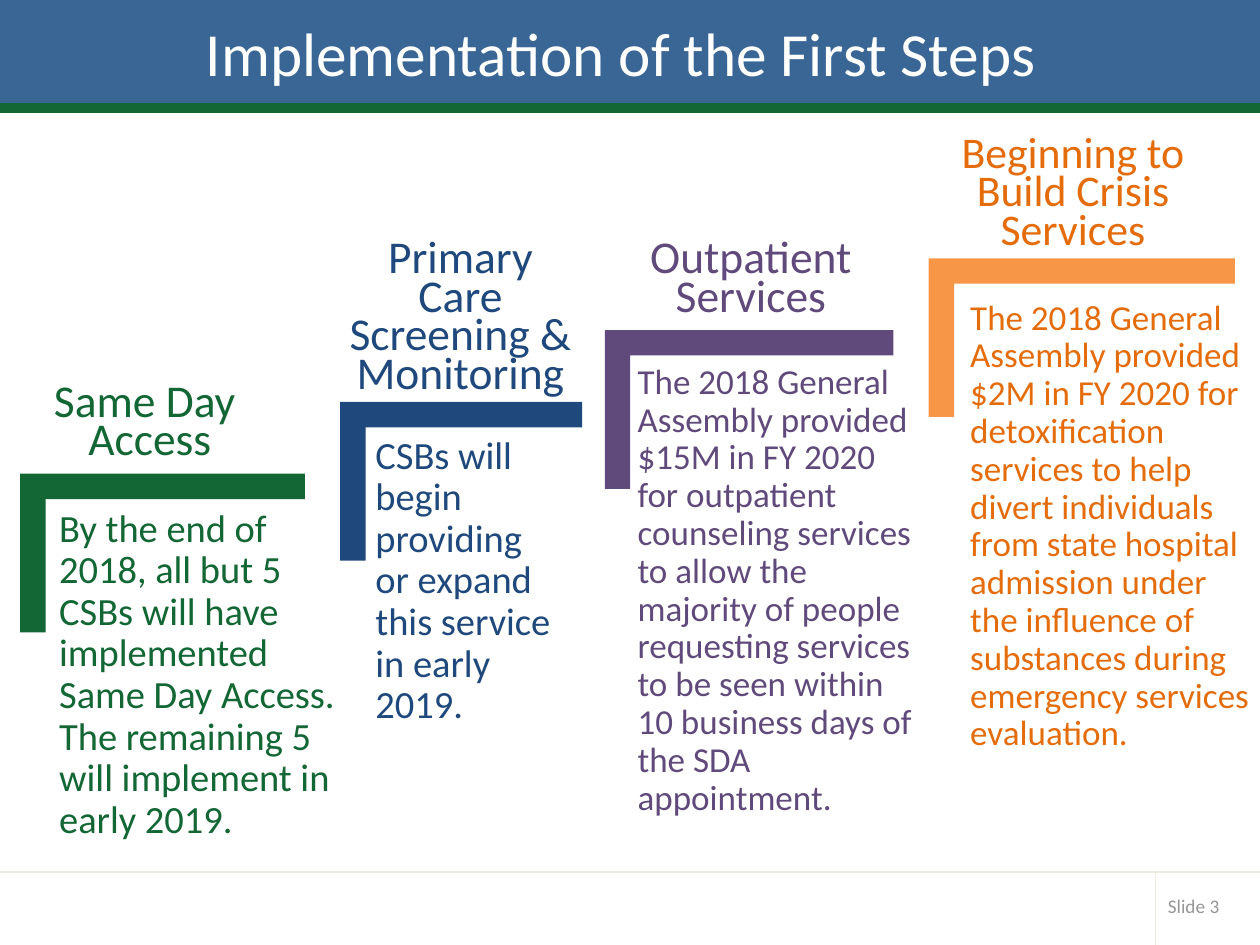
from lxml import etree
from pptx import Presentation
from pptx.dml.color import RGBColor
from pptx.enum import shapes, text
from pptx.oxml.ns import qn
from pptx.util import Inches, Pt

COLORS = {
    "band": "3A6695", "green": "136735", "rule": "EEECE1", "grey": "969696",
    "white": "FFFFFF", "navy": "1F497D", "purple": "604A7B",
    "orange": "E46C0A", "light orange": "F79646",
}
TITLE = "Implementation of the First Steps"
FOOTER = "Slide 3"

# Boxes are left, top, width, height; a bracket is left, width.
STEPS = [
    dict(heading="Same Day \nAccess", heading_box=(0.32, 3.03, 1.74, 0.74),
         heading_size=26, heading_wrap=False, bracket=(0.16, 2.26),
         bracket_color="green", color="green",
         body="By the end of \n2018, all but 5 \nCSBs will have implemented \n"
              "Same Day Access. The remaining 5 will implement in early 2019.",
         body_box=(0.4, 3.97, 2.63, 1.66), body_size=22),
    dict(heading="Primary Care Screening & Monitoring",
         heading_box=(2.66, 1.89, 1.99, 1.35),
         heading_size=26, heading_wrap=True, bracket=(2.7, 1.92),
         bracket_color="navy", color="navy",
         body="CSBs will begin providing or expand this service in early 2019.",
         body_box=(2.91, 3.39, 1.56, 1.66), body_size=22),
    dict(heading="Outpatient Services", heading_box=(5, 1.89, 1.92, 0.74),
         heading_size=26, heading_wrap=True, bracket=(4.8, 2.29),
         bracket_color="purple", color="purple",
         body="The 2018 General Assembly provided $15M in FY 2020 for outpatient "
              "counseling services to allow the majority of people requesting "
              "services to be seen within 10 business days of the SDA appointment.",
         body_box=(4.99, 2.82, 2.38, 1.66), body_size=20),
    dict(heading="Beginning to Build Crisis Services",
         heading_box=(7.37, 1.05, 2.29, 1.04),
         heading_size=25, heading_wrap=True, bracket=(7.37, 2.43),
         bracket_color="light orange", color="orange",
         body="The 2018 General Assembly provided $2M in FY 2020 for detoxification "
              "services to help divert individuals from state hospital admission "
              "under the influence of substances during emergency services evaluation.",
         body_box=(7.63, 2.31, 2.38, 1.66), body_size=20),
]
FIRST_TOP, RISE = 3.76, 0.57
BRACKET_HEIGHT, BRACKET_THICKNESS = 1.26, 0.16


def rgb(name):
    return RGBColor.from_string(COLORS[name])


def add_text(slide, content, box, size, color, align=text.PP_ALIGN.LEFT,
             anchor=text.MSO_ANCHOR.TOP, spacing=None, inset=None, wrap=True):
    frame = slide.shapes.add_textbox(*map(Inches, box)).text_frame
    frame.word_wrap = wrap
    frame.vertical_anchor = anchor
    if inset is not None:
        frame.margin_left = frame.margin_right = Inches(inset)
        frame.margin_top = frame.margin_bottom = Inches(inset)
    paragraph = frame.paragraphs[0]
    paragraph.text = content
    paragraph.alignment = align
    paragraph.line_spacing = spacing
    for run in paragraph.runs:
        run.font.name = "Calibri"
        run.font.size = Pt(size)
        run.font.color.rgb = rgb(color)


def add_filled(slide, kind, box, color, outline=None):
    shape = slide.shapes.add_shape(kind, *map(Inches, box))
    shape.shadow.inherit = False
    shape.fill.solid()
    shape.fill.fore_color.rgb = rgb(color)
    if outline:
        shape.line.color.rgb = rgb(color)
        shape.line.width = Pt(outline)
    else:
        shape.line.fill.background()
    return shape


def add_rule(slide, *ends):
    rule = slide.shapes.add_connector(shapes.MSO_CONNECTOR.STRAIGHT, *map(Inches, ends))
    rule.line.color.rgb = rgb("rule")
    rule.line.width = Pt(1)
    etree.SubElement(rule._element.spPr, qn("a:effectLst"))


def add_bracket(slide, left, top, width, color):
    """Draw a corner turned by 90 degrees, placed by its box after the turn."""
    shift = (width - BRACKET_HEIGHT) / 2
    box = (left + shift, top - shift, BRACKET_HEIGHT, width)
    bracket = add_filled(slide, shapes.MSO_SHAPE.CORNER, box, color)
    bracket.rotation = 90
    for i in range(2):
        bracket.adjustments[i] = BRACKET_THICKNESS


def main():
    prs = Presentation()
    prs.slide_width, prs.slide_height = Inches(10), Inches(7.5)
    slide = prs.slides.add_slide(prs.slide_layouts[6])
    center, middle = text.PP_ALIGN.CENTER, text.MSO_ANCHOR.MIDDLE

    for box, color in (((0, 0, 10, 0.83), "band"), ((0, 0.83, 10, 0.05), "green")):
        add_filled(slide, shapes.MSO_SHAPE.RECTANGLE, box, color, outline=2)
    add_rule(slide, 0, 6.92, 10, 6.92)
    add_rule(slide, 9.17, 6.92, 9.17, 7.5)
    add_text(slide, FOOTER, (9.17, 7.04, 0.74, 0.29), 11, "grey", anchor=middle)
    add_text(slide, TITLE, (-0.07, 0, 10, 0.83), 35, "white", align=center, anchor=middle)

    for i, step in enumerate(STEPS):
        add_text(slide, step["heading"], step["heading_box"], step["heading_size"],
                 step["color"], align=center, spacing=Pt(22), wrap=step["heading_wrap"])
        left, width = step["bracket"]
        add_bracket(slide, left, FIRST_TOP - i * RISE, width, step["bracket_color"])
        add_text(slide, step["body"], step["body_box"], step["body_size"],
                 step["color"], spacing=0.9, inset=0.07)

    prs.save("out.pptx")


if __name__ == "__main__":
    main()
